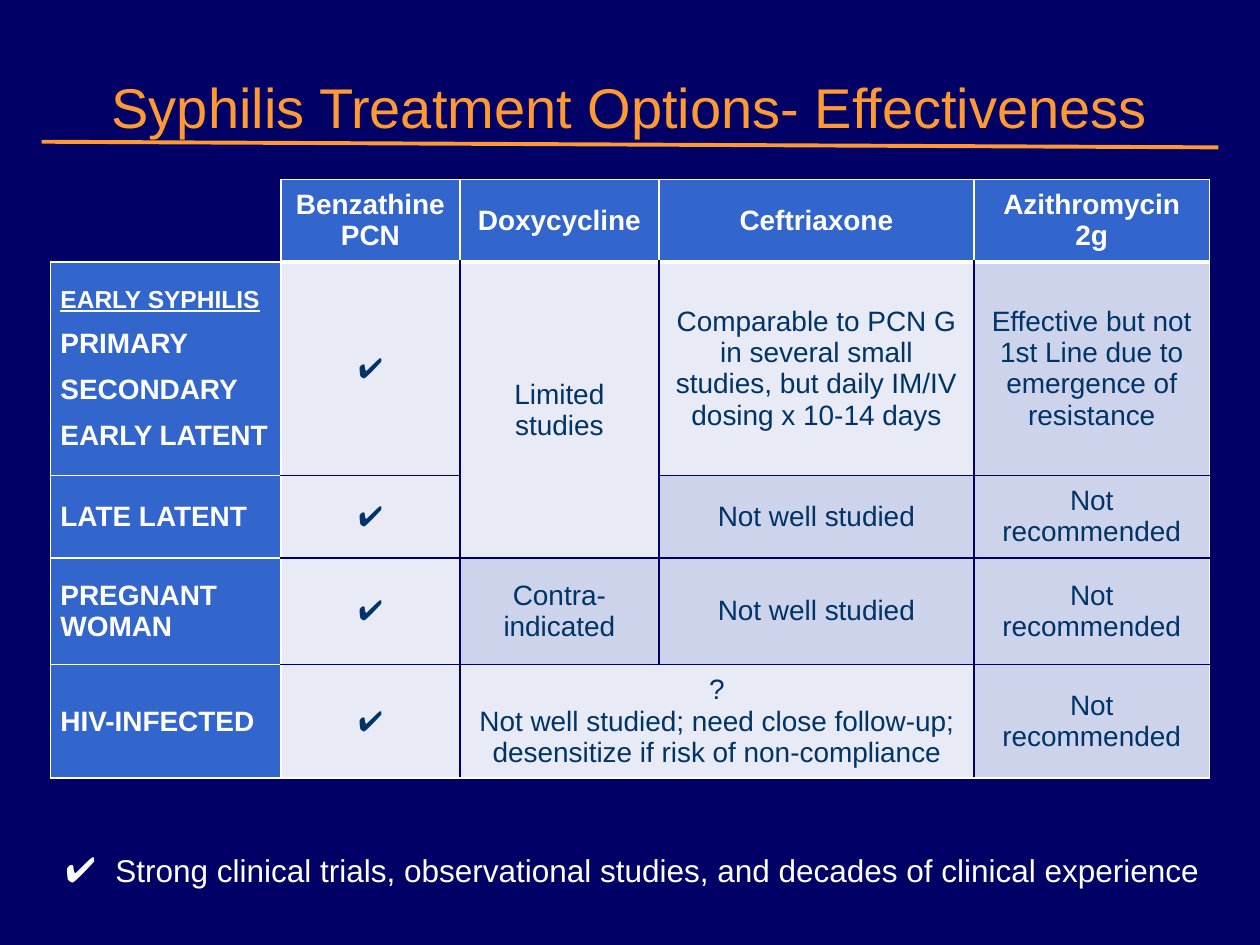
from lxml import etree
from pptx import Presentation
from pptx import util as u
from pptx.dml.color import RGBColor
from pptx.enum import shapes, text
from pptx.oxml import ns

W, H = u.Inches(10), u.Inches(7.5)
NAVY = RGBColor(0x00, 0x00, 0x66)
BLUE = RGBColor(0x33, 0x66, 0xCC)
PALE = RGBColor(0xE8, 0xEA, 0xF6)
LILAC = RGBColor(0xCE, 0xD3, 0xEC)
INK = RGBColor(0x00, 0x33, 0x66)
WHITE = RGBColor(0xFF, 0xFF, 0xFF)
ORANGE = RGBColor(0xFF, 0x99, 0x33)
FONT = "Arial"
CHECK = "✔"
UNADVISED = "Not recommended"
UNSTUDIED = "Not well studied"

COLS = [0.183, 0.142, 0.158, 0.25, 0.187]
ROWS = [0.087, 0.226, 0.087, 0.113, 0.12]
CELLS = [
    ["", "Benzathine PCN", "Doxycycline", "Ceftriaxone", "Azithromycin 2g"],
    ["EARLY SYPHILIS\nPRIMARY\nSECONDARY\nEARLY LATENT", CHECK, "Limited studies",
     "Comparable to PCN G in several small studies, but daily IM/IV dosing x 10-14 days",
     "Effective but not 1st Line due to emergence of resistance"],
    ["LATE LATENT", CHECK, "", UNSTUDIED, UNADVISED],
    ["PREGNANT\nWOMAN", CHECK, "Contra-indicated", UNSTUDIED, UNADVISED],
    ["HIV-INFECTED", CHECK,
     "?\nNot well studied; need close follow-up; desensitize if risk of non-compliance",
     "", UNADVISED],
]
PALE_CELLS = {(1, 2), (2, 2), (1, 3), (4, 2), (4, 3)}
LAST_ROW, LAST_COL = len(ROWS) - 1, len(COLS) - 1


def share(x, y):
    return round(W * x), round(H * y)


def add_run(p, words, size, color, bold=False):
    r = p.add_run()
    r.text = words
    f = r.font
    f.name, f.size, f.bold = FONT, u.Pt(size), bold
    f.color.rgb = color
    return r


def add_textbox(s, x, y, w, h):
    tf = s.shapes.add_textbox(*share(x, y), *share(w, h)).text_frame
    tf.word_wrap = True
    return tf


def add_rule(s, start, end):
    line = s.shapes.add_connector(shapes.MSO_CONNECTOR.STRAIGHT, *share(*start), *share(*end))
    line.line.color.rgb = ORANGE
    line.line.width = u.Pt(2.25)
    etree.SubElement(line._element.spPr, ns.qn("a:effectLst"))


def set_borders(cell, row, col):
    corner = row == col == 0
    header, label = row == 0, col == 0
    white_edges = {
        "L": not corner and (header or col <= 1),
        "R": header or label or col == LAST_COL,
        "T": not corner and (row <= 1 or label),
        "B": header or label or row == LAST_ROW,
    }
    tcPr = cell._tc.get_or_add_tcPr()
    for i, (side, white) in enumerate(white_edges.items()):
        heavy = side == "B" and header and not corner
        ln = etree.Element(ns.qn(f"a:ln{side}"), w=str(u.Pt(3 if heavy else 1)))
        fill = etree.SubElement(ln, ns.qn("a:solidFill"))
        etree.SubElement(fill, ns.qn("a:srgbClr"), val=str(WHITE if white else NAVY))
        tcPr.insert(i, ln)


def cell_fill(row, col):
    if row == 0 or col == 0:
        return BLUE
    return PALE if col == 1 or (row, col) in PALE_CELLS else LILAC


def fill_cell(cell, row, col, words):
    heading = row == 0 or col == 0
    cell.vertical_anchor = text.MSO_ANCHOR.MIDDLE
    cell.margin_left = cell.margin_right = u.Inches(0.08)
    cell.margin_top = cell.margin_bottom = u.Inches(0.08)
    if row == col == 0:
        cell.fill.background()
    else:
        cell.fill.solid()
        cell.fill.fore_color.rgb = cell_fill(row, col)
    set_borders(cell, row, col)
    if not words:
        return
    tf = cell.text_frame
    for i, line in enumerate(words.split("\n")):
        p = tf.add_paragraph() if i else tf.paragraphs[0]
        p.alignment = text.PP_ALIGN.LEFT if col == 0 else text.PP_ALIGN.CENTER
        group_title = row == 1 and col == 0 and i == 0
        r = add_run(p, line, 14 if group_title else 16, WHITE if heading else INK, heading)
        if group_title:
            r.font.underline = True
        elif row == 1 and col == 0:
            p.space_before = u.Pt(8.5)


def add_treatment_table(s):
    frame = s.shapes.add_table(len(ROWS), len(COLS), *share(0.04, 0.19),
                               *share(sum(COLS), sum(ROWS)))
    table = frame.table
    table.first_row = table.horz_banding = False
    for column, width in zip(table.columns, COLS):
        column.width = round(W * width)
    for row, height in zip(table.rows, ROWS):
        row.height = round(H * height)
    for row, line in enumerate(CELLS):
        for col, words in enumerate(line):
            fill_cell(table.cell(row, col), row, col, words)
    table.cell(1, 2).merge(table.cell(2, 2))
    table.cell(4, 2).merge(table.cell(4, 3))


def add_title(s):
    p = add_textbox(s, 0.071, 0.07, 0.858, 0.16).paragraphs[0]
    p.alignment = text.PP_ALIGN.CENTER
    add_run(p, "Syphilis Treatment Options- Effectiveness", 32, ORANGE)


def add_legend(s):
    p = add_textbox(s, 0.042, 0.89, 0.94, 0.06).paragraphs[0]
    r = add_run(p, CHECK + " ", 20, WHITE)
    r._r.get_or_add_rPr().set("spc", "280")
    add_run(p, "Strong clinical trials, observational studies, and decades of clinical experience",
            18, WHITE)


def main():
    prs = Presentation()
    prs.slide_width, prs.slide_height = W, H
    s = prs.slides.add_slide(prs.slide_layouts[6])
    s.background.fill.solid()
    s.background.fill.fore_color.rgb = NAVY
    add_treatment_table(s)
    add_title(s)
    add_rule(s, (0.033, 0.15), (0.967, 0.156))
    add_legend(s)
    prs.save("out.pptx")


if __name__ == "__main__":
    main()
